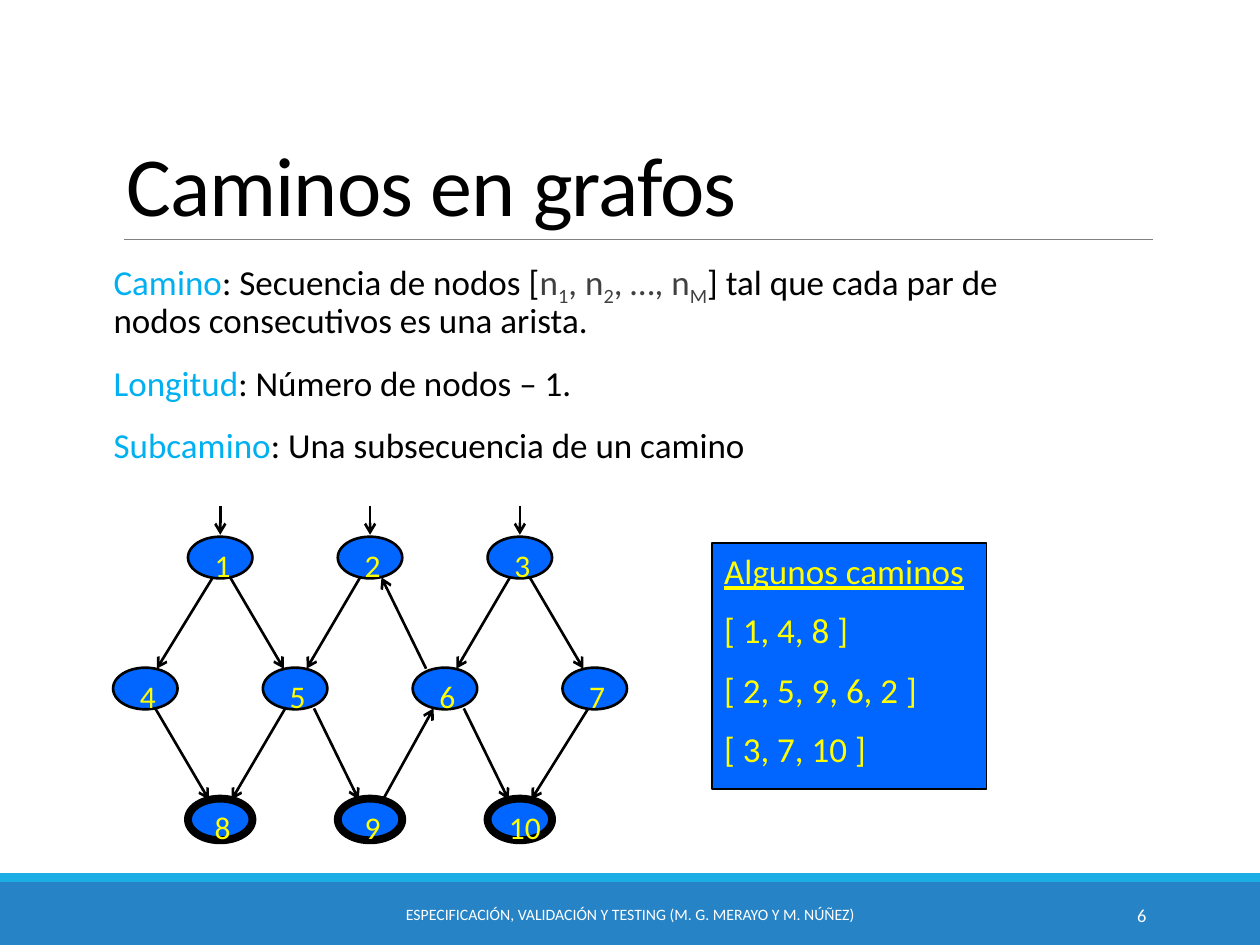
from dataclasses import dataclass

from lxml import etree
from pptx import Presentation
from pptx.dml.color import RGBColor
from pptx.enum import shapes, text
from pptx.oxml import ns
from pptx.util import Cm, Pt

BLACK = RGBColor(0x00, 0x00, 0x00)
WHITE = RGBColor(0xFF, 0xFF, 0xFF)
GREY = RGBColor(0x80, 0x80, 0x80)
DARK_GREY = RGBColor(0x40, 0x40, 0x40)
TERM_BLUE = RGBColor(0x00, 0xB0, 0xF0)
NODE_BLUE = RGBColor(0x00, 0x66, 0xFF)
YELLOW = RGBColor(0xFF, 0xFF, 0x00)
FOOTER_BLUE = RGBColor(0x26, 0x83, 0xC6)
ACCENT_BLUE = RGBColor(0x1C, 0xAD, 0xE4)
FONT = "Calibri"

# Graph grid, in centimetres
FIRST_X, STEP_X = 2.93, 1.51
FIRST_Y, STEP_Y = 11.24, 2.64
NODE_W, NODE_H = 1.3, 0.84


@dataclass
class Node:
    label: str
    column: int
    row: int

    @property
    def x(self) -> float:
        return FIRST_X + self.column * STEP_X

    @property
    def y(self) -> float:
        return FIRST_Y + self.row * STEP_Y


@dataclass
class Edge:
    source: int
    target: int
    leave: float = 0.2  # horizontal distance from the source's centre


@dataclass
class Piece:
    words: str
    color: RGBColor = BLACK
    subscript: bool = False


# Columns alternate between outer rows (1, 3, 5) and the middle row (0, 2, 4, 6)
NODES = {
    number: Node(str(number), column, row)
    for number, (column, row) in enumerate(
        [(1, 0), (3, 0), (5, 0), (0, 1), (2, 1), (4, 1), (6, 1),
         (1, 2), (3, 2), (5, 2)], start=1)
}
EDGES = [
    Edge(1, 4, 0.15), Edge(1, 5), Edge(2, 5), Edge(3, 6), Edge(3, 7),
    Edge(4, 8), Edge(5, 8), Edge(5, 9, 0.38), Edge(9, 6, 0.26),
    Edge(6, 2, 0.38), Edge(6, 10, 0.38), Edge(7, 10, 0.13),
]
DEFINITIONS = [
    [Piece("Camino", TERM_BLUE), Piece(": Secuencia de nodos ["),
     Piece("n", DARK_GREY), Piece("1", DARK_GREY, True),
     Piece(", n", DARK_GREY), Piece("2", DARK_GREY, True),
     Piece(", …, n", DARK_GREY), Piece("M", DARK_GREY, True),
     Piece("] tal que cada par de nodos consecutivos es una arista.")],
    [Piece("Longitud", TERM_BLUE), Piece(": Número de nodos – 1.")],
    [Piece("Subcamino", TERM_BLUE), Piece(": Una subsecuencia de un camino")],
]
PATHS = ["Algunos caminos", "[ 1, 4, 8 ]", "[ 2, 5, 9, 6, 2 ]", "[ 3, 7, 10 ]"]


def set_font(font, size: float, color: RGBColor) -> None:
    font.name, font.size = FONT, Pt(size)
    font.color.rgb = color


def add_filled(parent, kind, left: float, top: float, width: float,
               height: float, fill: RGBColor, outline: float = 0):
    shape = parent.add_shape(kind, Cm(left), Cm(top), Cm(width), Cm(height))
    shape.shadow.inherit = False
    shape.fill.solid()
    shape.fill.fore_color.rgb = fill
    if outline:
        shape.line.color.rgb = BLACK
        shape.line.width = Pt(outline)
    else:
        shape.line.fill.background()
    return shape


def add_line(parent, x1: float, y1: float, x2: float, y2: float,
             color: RGBColor = BLACK, width: float = 1.5,
             arrow: bool = True) -> None:
    line = parent.add_connector(shapes.MSO_CONNECTOR.STRAIGHT,
                                Cm(x1), Cm(y1), Cm(x2), Cm(y2))
    line.line.color.rgb = color
    line.line.width = Pt(width)
    if arrow:
        etree.SubElement(line.line._get_or_add_ln(), ns.qn("a:tailEnd"),
                         type="arrow")
    etree.SubElement(line._element.spPr, ns.qn("a:effectLst"))


def add_label(parent, words: str, left: float, top: float, width: float,
              height: float, size: float, color: RGBColor, align,
              anchor=text.MSO_ANCHOR.MIDDLE, wrap: bool = True) -> None:
    frame = parent.add_textbox(Cm(left), Cm(top), Cm(width),
                               Cm(height)).text_frame
    frame.word_wrap = wrap
    frame.vertical_anchor = anchor
    paragraph = frame.paragraphs[0]
    paragraph.text, paragraph.alignment = words, align
    set_font(paragraph.font, size, color)


def add_node(parent, node: Node) -> None:
    left, top = node.x - NODE_W / 2, node.y - NODE_H / 2
    is_final = node.row == 2
    add_filled(parent, shapes.MSO_SHAPE.OVAL, left, top, NODE_W, NODE_H,
               NODE_BLUE, 4.5 if is_final else 1.5)
    digits = len(node.label)
    width = 0.5 + 0.33 * digits
    add_label(parent, node.label, node.x + 0.05 * digits - width / 2,
              top + 0.06, width, 1.02, 18, YELLOW, text.PP_ALIGN.CENTER,
              text.MSO_ANCHOR.TOP, wrap=False)


def add_edge(parent, edge: Edge) -> None:
    source, target = NODES[edge.source], NODES[edge.target]
    across = 1 if target.x > source.x else -1
    down = 1 if target.y > source.y else -1
    add_line(parent, source.x + across * edge.leave, source.y + down * 0.4,
             target.x - across * 0.23, target.y - down * 0.4)


def add_definitions(slide) -> None:
    frame = slide.shapes.add_textbox(Cm(2.29), Cm(5.13), Cm(19.41),
                                     Cm(4.62)).text_frame
    frame.word_wrap = True
    frame.margin_left = frame.margin_right = 0
    for index, pieces in enumerate(DEFINITIONS):
        paragraph = frame.add_paragraph() if index else frame.paragraphs[0]
        paragraph.line_spacing = 0.9
        paragraph.space_before, paragraph.space_after = Pt(12), Pt(2)
        paragraph.font.name, paragraph.font.size = FONT, Pt(20)
        for piece in pieces:
            run = paragraph.add_run()
            run.text = piece.words
            run.font.color.rgb = piece.color
            if piece.subscript:
                run.font._element.set("baseline", "-25000")


def add_paths(slide) -> None:
    frame = add_filled(slide.shapes, shapes.MSO_SHAPE.RECTANGLE, 14.35, 10.95,
                       5.54, 4.95, NODE_BLUE, 1).text_frame
    frame.word_wrap = True
    frame.vertical_anchor = text.MSO_ANCHOR.TOP
    for index, words in enumerate(PATHS):
        paragraph = frame.add_paragraph() if index else frame.paragraphs[0]
        paragraph.text, paragraph.alignment = words, text.PP_ALIGN.LEFT
        paragraph.space_before = Pt(10 if index else 0)
        set_font(paragraph.font, 20, YELLOW)
        paragraph.font.underline = index == 0


def main() -> None:
    deck = Presentation()
    deck.slide_width, deck.slide_height = Cm(25.4), Cm(19.05)
    slide = deck.slides.add_slide(deck.slide_layouts[5])

    # Footer bands and the rule under the title
    for top, height, color in [(17.78, 1.27, FOOTER_BLUE),
                               (17.6, 0.18, ACCENT_BLUE)]:
        add_filled(slide.shapes, shapes.MSO_SHAPE.RECTANGLE, 0, top, 25.4,
                   height, color)
    add_line(slide.shapes, 2.49, 4.83, 23.24, 4.83, GREY, 0.5, arrow=False)

    # Title
    title = slide.shapes.title
    title.left, title.top = Cm(2.29), Cm(0.79)
    title.width, title.height = Cm(20.96), Cm(4.04)
    title.text_frame.text = "Caminos en grafos"
    title.text_frame.auto_size = text.MSO_AUTO_SIZE.NONE
    title.text_frame.vertical_anchor = text.MSO_ANCHOR.BOTTOM
    heading = title.text_frame.paragraphs[0]
    heading.alignment, heading.line_spacing = text.PP_ALIGN.LEFT, 0.85
    set_font(heading.font, 48, BLACK)
    heading.runs[0].font._element.set("spc", "-50")

    # Graph, with an entry arrow above each initial node
    graph = slide.shapes.add_group_shape().shapes
    for node in NODES.values():
        add_node(graph, node)
        if node.row == 0:
            add_line(graph, node.x, node.y - 1.04, node.x, node.y - 0.46)
    for edge in EDGES:
        add_edge(graph, edge)

    # Definitions and example paths
    add_definitions(slide)
    add_paths(slide)

    # Footer text
    add_label(slide.shapes,
              "ESPECIFICACIÓN, VALIDACIÓN Y TESTING (M. G. MERAYO Y M. NÚÑEZ)",
              7.67, 17.93, 10.06, 1.02, 9, WHITE, text.PP_ALIGN.CENTER)
    add_label(slide.shapes, "6", 20.62, 17.93, 2.74, 1.02, 10.5, WHITE,
              text.PP_ALIGN.RIGHT)

    deck.save("out.pptx")


if __name__ == "__main__":
    main()
